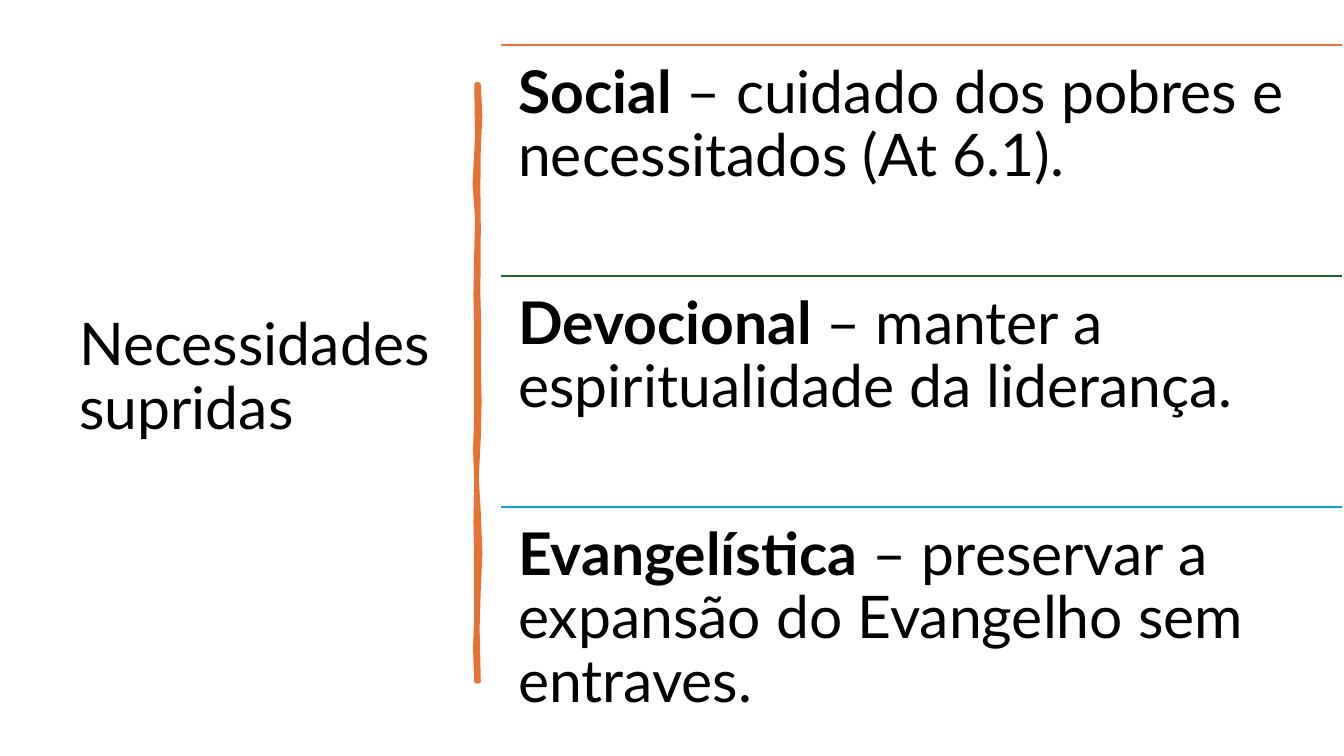
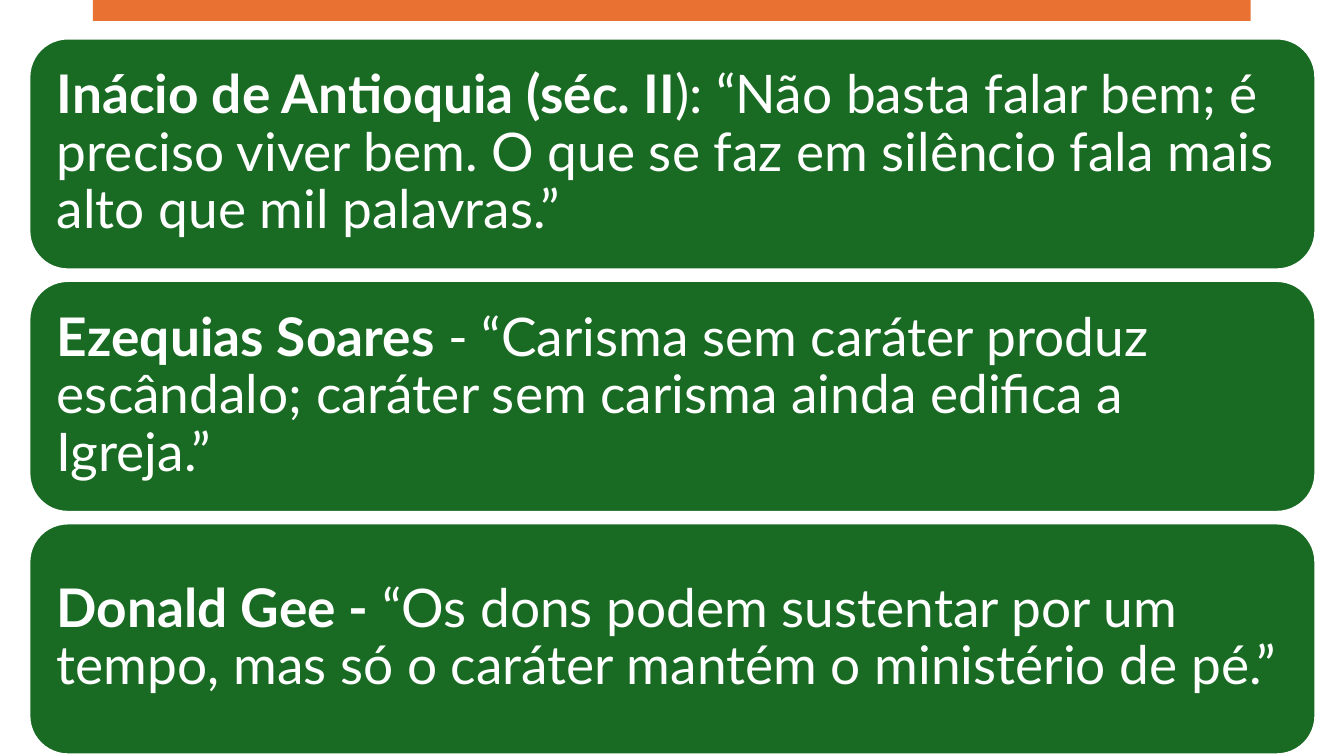
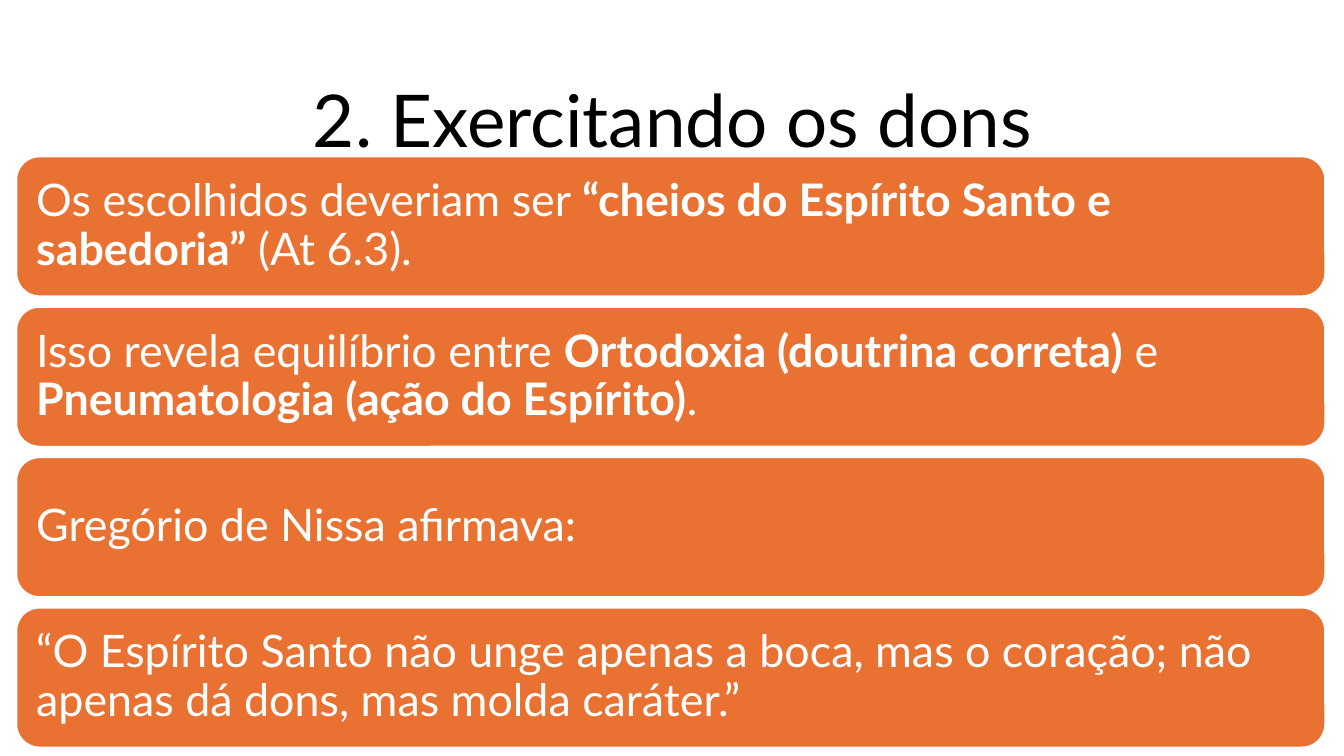
import pptx
import pptx.util
import pptx.dml.color
import pptx.enum.shapes
import pptx.enum.text
import pptx.oxml.ns
import lxml.etree

Cm = pptx.util.Cm
Pt = pptx.util.Pt
Anchor = pptx.enum.text.MSO_ANCHOR
Align = pptx.enum.text.PP_ALIGN
Shape = pptx.enum.shapes.MSO_SHAPE

COLORS = {
    "text": "000000",
    "white": "FFFFFF",
    "orange": "E97132",
    "green": "196B24",
    "blue": "0F9ED5",
}
FONT = "Lato"
PAGE_WIDTH, PAGE_HEIGHT = 33.87, 19.05
LINE_WIDTH = 1.5

# Edges of the brush stroke: (sideways, downward) in hundredths of a cm
STROKE_RIGHT = [
    (5, 0), (9, 80), (5, 160), (4, 260), (5, 360), (4, 530), (6, 610), (5, 690),
    (7, 800), (5, 890), (0, 990), (5, 1080), (9, 1180), (5, 1270), (2, 1370), (5, 1504),
]
STROKE_LEFT = [
    (0, 1504), (-3, 1420), (0, 1340), (0, 1200), (-2, 1100), (0, 1000), (-3, 920),
    (0, 840), (0, 640), (-2, 530), (0, 420), (2, 340), (-4, 250), (2, 130), (0, 0),
]

NEEDS = [
    ("orange", "**Social** – cuidado dos pobres e necessitados (At 6.1)."),
    ("green", "**Devocional** – manter a espiritualidade da liderança."),
    ("blue", "**Evangelística** – preservar a expansão do Evangelho sem entraves."),
]
QUOTES = [
    "**Inácio de Antioquia (séc. II**): “Não basta falar bem; é preciso viver bem. "
    "O que se faz em silêncio fala mais alto que mil palavras.”",
    "**Ezequias Soares** - “Carisma sem caráter produz escândalo; "
    "caráter sem carisma ainda edifica a Igreja.”",
    "**Donald Gee - **“Os dons podem sustentar por um tempo, "
    "mas só o caráter mantém o ministério de pé.”",
]
GIFTS = [
    "Os escolhidos deveriam ser **“cheios do Espírito Santo e sabedoria”** (At 6.3).",
    "Isso revela equilíbrio entre **Ortodoxia (doutrina correta)** e "
    "**Pneumatologia (ação do Espírito)**.",
    "Gregório de Nissa afirmava:",
    "“O Espírito Santo não unge apenas a boca, mas o coração; "
    "não apenas dá dons, mas molda caráter.”",
]


def color(name):
    return pptx.dml.color.RGBColor.from_string(COLORS[name])


def paint(shape, fill, line=None, width=LINE_WIDTH):
    shape.shadow.inherit = False
    shape.fill.solid()
    shape.fill.fore_color.rgb = color(fill)
    if line:
        shape.line.color.rgb = color(line)
        shape.line.width = Pt(width)
    else:
        shape.line.fill.background()


def write(shape, text, size, tint="text", anchor=Anchor.MIDDLE, align=Align.LEFT,
          inset_x=0.25, inset_y=0.13):
    """Fill the shape with one paragraph; text between ** marks is bold."""
    frame = shape.text_frame
    frame.word_wrap = True
    frame.vertical_anchor = anchor
    frame.margin_left = frame.margin_right = Cm(inset_x)
    frame.margin_top = frame.margin_bottom = Cm(inset_y)
    para = frame.paragraphs[0]
    para.alignment = align
    para.line_spacing = 0.9
    for index, part in enumerate(text.split("**")):
        if part:
            span = para.add_run()
            span.text = part
            span.font.name = FONT
            span.font.size = Pt(size)
            span.font.bold = index % 2 == 1
            span.font.color.rgb = color(tint)


def add_text(page, box, text, **style):
    write(page.shapes.add_textbox(*map(Cm, box)), text, **style)


def add_rule(page, left, top, width, tint):
    rule = page.shapes.add_connector(
        pptx.enum.shapes.MSO_CONNECTOR.STRAIGHT,
        Cm(left), Cm(top), Cm(left + width), Cm(top))
    rule.line.color.rgb = color(tint)
    rule.line.width = Pt(LINE_WIDTH)
    properties = rule._element.spPr
    lxml.etree.SubElement(properties, pptx.oxml.ns.qn("a:effectLst"))


def add_brush_stroke(page, left, top):
    points = STROKE_RIGHT + STROKE_LEFT
    builder = page.shapes.build_freeform(*points[0], scale=Cm(0.01))
    builder.add_line_segments(points[1:], close=True)
    stroke = builder.convert_to_shape(Cm(left), Cm(top))
    paint(stroke, "orange", "orange", 3.25)


def add_ruled_list(page, box, items):
    left, top, width, height = box
    step = height / len(items)
    for index, (tint, text) in enumerate(items):
        row_top = top + index * step
        add_rule(page, left, row_top, width, tint)
        add_text(page, (left, row_top, width, step), text, size=42,
                 anchor=Anchor.TOP, inset_x=0.44, inset_y=0.44)


def add_cards(page, box, texts, gap, fill, size, inset):
    left, top, width, height = box
    card_height = (height - gap * (len(texts) - 1)) / len(texts)
    for index, text in enumerate(texts):
        card_top = top + index * (card_height + gap)
        card = page.shapes.add_shape(
            Shape.ROUNDED_RECTANGLE, Cm(left), Cm(card_top), Cm(width), Cm(card_height))
        paint(card, fill, "white")
        write(card, text, size, tint="white", inset_x=inset, inset_y=inset)


def build_needs(page):
    add_text(page, (1.75, 1.78, 9.5, 15.52), "Necessidades supridas", size=42)
    add_brush_stroke(page, 12.01, 2.13)
    add_ruled_list(page, (12.62, 1.14, 21.21, 17.46), NEEDS)


def build_quotes(page):
    band = page.shapes.add_shape(Shape.RECTANGLE, Cm(2.34), 0, Cm(29.18), Cm(0.53))
    paint(band, "orange")
    add_cards(page, (0.74, 0.97, 32.41, 18.04), QUOTES,
              gap=0.29, fill="green", size=38, inset=0.41)


def build_gifts(page):
    add_text(page, (2.34, 1.55, 29.21, 3.15), "2. Exercitando os dons",
             size=52, align=Align.CENTER)
    add_cards(page, (0.41, 3.94, 32.99, 14.9), GIFTS,
              gap=0.26, fill="orange", size=32, inset=0.33)


def main():
    deck = pptx.Presentation()
    deck.slide_width, deck.slide_height = Cm(PAGE_WIDTH), Cm(PAGE_HEIGHT)
    blank = deck.slide_layouts[6]
    for build in (build_needs, build_quotes, build_gifts):
        build(deck.slides.add_slide(blank))
    deck.save("out.pptx")


if __name__ == "__main__":
    main()
